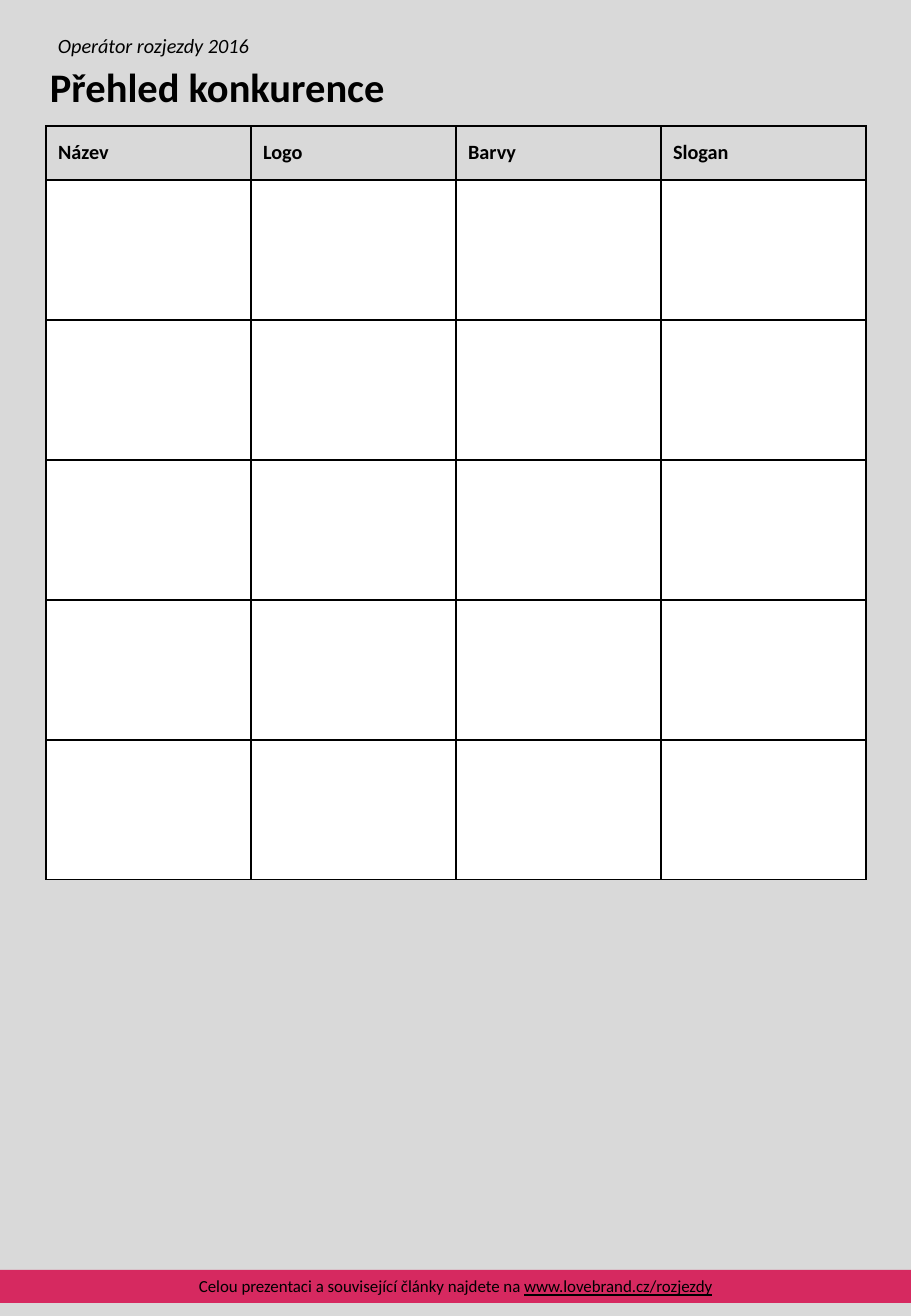
from lxml.etree import SubElement as Sub
from pptx import Presentation
from pptx.dml.color import RGBColor
from pptx.enum.shapes import MSO_SHAPE as Shape
from pptx.enum.text import MSO_ANCHOR as Anchor, PP_ALIGN as Align
from pptx.oxml.ns import qn
from pptx.util import Pt

# Content
EVENT = "Operátor rozjezdy 2016"
TITLE = "Přehled konkurence"
HEADS = ["Název", "Logo", "Barvy", "Slogan"]
BLANKS = 5
NOTE = "Celou prezentaci a související články najdete na "
SITE = "www.lovebrand.cz/rozjezdy"

# Look and layout, in px
FONT = "Calibri"
BLACK, WHITE, GREY, PINK = "000000", "FFFFFF", "D9D9D9", "D62960"
SCALE = 7526
WIDE, HIGH = 911, 1316
LEFT, TOP = 46, 126
COL, HEAD, ROW = 205, 54, 140


def px(*nums):
    return [n * SCALE for n in nums]


def color(code):
    return RGBColor.from_string(code)


def paint(part, code):
    part.fill.solid()
    part.fill.fore_color.rgb = color(code)


def write(frame, *texts, size=12, bold=False, italic=False,
          align=Align.LEFT, anchor=Anchor.TOP):
    frame.word_wrap = True
    frame.vertical_anchor = anchor
    para = frame.paragraphs[0]
    para.alignment = align
    for text in texts:
        run = para.add_run()
        run.text = text
        font = run.font
        font.name, font.size = FONT, Pt(size)
        font.bold, font.italic = bold, italic
        font.color.rgb = color(BLACK)
    return para


def frame_cell(cell):
    props = cell._tc.get_or_add_tcPr()
    for i, side in enumerate(("a:lnL", "a:lnR", "a:lnT", "a:lnB")):
        line = props.makeelement(qn(side), {"w": str(Pt(1))})
        fill = Sub(line, qn("a:solidFill"))
        Sub(fill, qn("a:srgbClr"), val=BLACK)
        props.insert(i, line)


deck = Presentation()
deck.slide_width, deck.slide_height = px(WIDE, HIGH)
slide = deck.slides.add_slide(deck.slide_layouts[6])
paint(slide.background, GREY)
shapes = slide.shapes

# Footer band
band = shapes.add_shape(Shape.RECTANGLE, *px(0, 1270, WIDE, 33))
band.shadow.inherit = False
band.line.fill.background()
paint(band, PINK)
foot = write(band.text_frame, NOTE, SITE, size=10, align=Align.CENTER,
             anchor=Anchor.TOP)
foot.runs[1].font.underline = True

# Event and title
event = shapes.add_textbox(*px(LEFT, 27, 486, 36))
write(event.text_frame, EVENT, italic=True)
title = shapes.add_textbox(*px(38, 52, 820, 69))
write(title.text_frame, TITLE, size=24, bold=True, anchor=Anchor.MIDDLE)

# Table
rows, cols = BLANKS + 1, len(HEADS)
grid = shapes.add_table(
    rows, cols, *px(LEFT, TOP, cols * COL, HEAD + BLANKS * ROW)).table
grid.first_row = grid.horz_banding = False
for col in grid.columns:
    col.width = COL * SCALE
for r, row in enumerate(grid.rows):
    row.height = (ROW if r else HEAD) * SCALE
    for c, cell in enumerate(row.cells):
        paint(cell, WHITE if r else GREY)
        frame_cell(cell)
        if r == 0:
            write(cell.text_frame, HEADS[c], bold=True)
            cell.vertical_anchor = Anchor.MIDDLE

deck.save("out.pptx")
